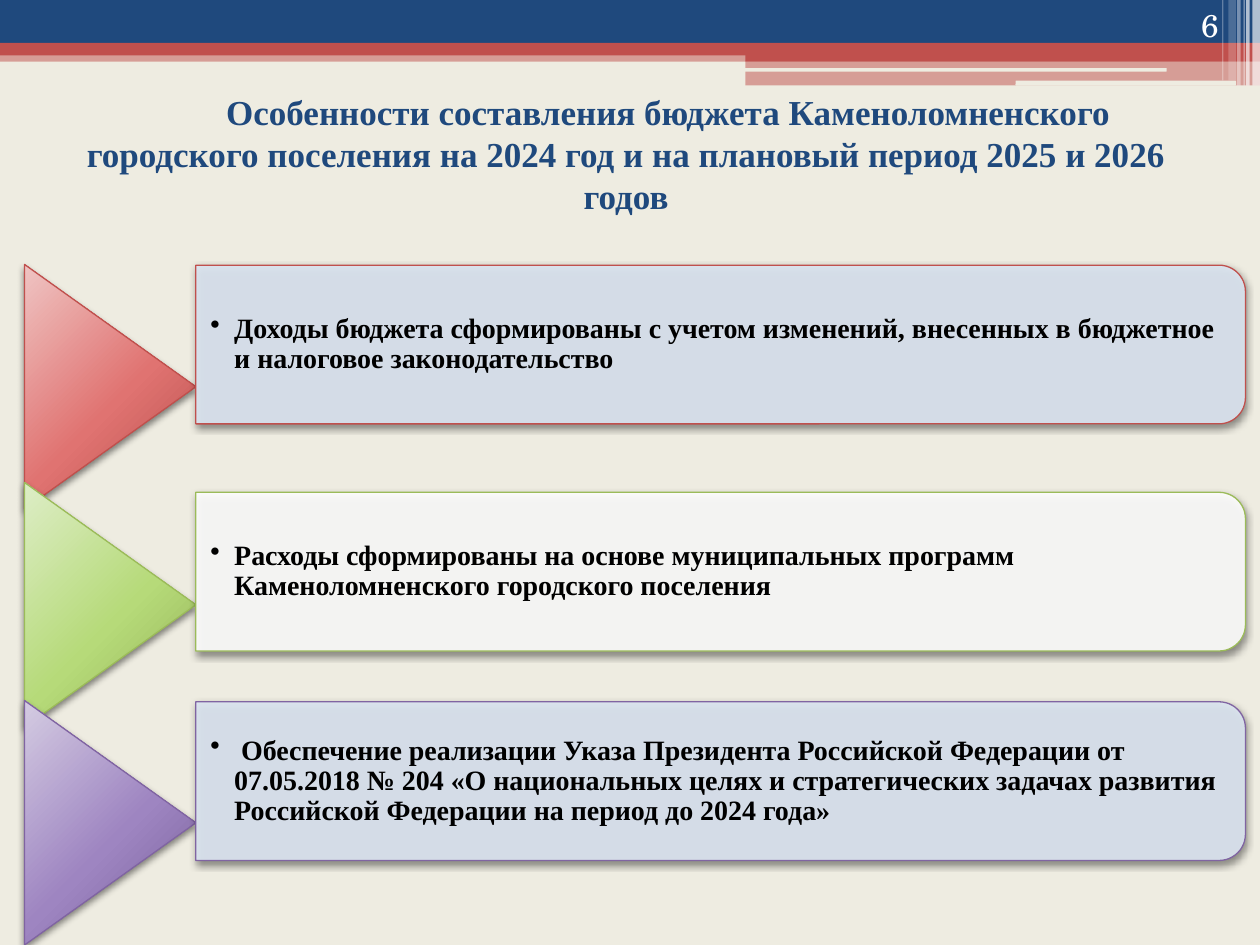
from typing import NamedTuple

from lxml.etree import SubElement
from pptx import Presentation
from pptx.dml.color import RGBColor
from pptx.enum.shapes import MSO_SHAPE
from pptx.enum.text import MSO_ANCHOR, PP_ALIGN
from pptx.oxml import parse_xml
from pptx.oxml.ns import nsdecls, qn
from pptx.util import Pt

HEX = {
    "cream": "EEECE1", "navy": "1F497D", "red": "C0504D", "green": "9BBB59",
    "violet": "8064A2", "white": "FFFFFF", "black": "000000", "ice": "DCE6F2",
}
SERIF = "Times New Roman"
RECT, ROUND = MSO_SHAPE.RECTANGLE, MSO_SHAPE.ROUNDED_RECTANGLE


class Box(NamedTuple):
    left: float
    top: float
    width: float
    height: float


class Band(NamedTuple):
    box: Box
    color: str
    alpha: int = 100
    kind: MSO_SHAPE = RECT


class Item(NamedTuple):
    mid: float
    color: str
    fill: str
    shades: tuple[str, str, str]
    text: str


BANDS = [
    # Header stripes
    Band(Box(0, 28.8, 720, 6.5), "red", 50),
    Band(Box(0, 0, 720, 24.5), "navy"),
    Band(Box(0, 24.5, 720, 7.2), "red"),
    Band(Box(426, 28.1, 294, 7), "red"),
    Band(Box(426, 34.6, 294, 14.2), "red", 50),
    Band(Box(425.5, 38.9, 241.2, 2), "cream", 100, ROUND),
    Band(Box(580.3, 46.1, 126, 2.8), "cream", 100, ROUND),
    # Light bars at the right edge
    *(Band(Box(left, 0, width, height), "white", alpha)
      for left, width, height, alpha in [
          (715.7, 4.3, 49, 65), (712.1, 2, 49, 65), (710.6, 0.7, 49, 60),
          (707, 2, 49, 40), (702, 4.3, 46, 20), (698.4, 0.7, 46, 30)]),
]

ITEMS = [
    Item(196.9, "red", "ice", ("EFC4C3", "E07371", "B34B48"),
         "Доходы бюджета сформированы с учетом изменений, внесенных в "
         "бюджетное и налоговое законодательство"),
    Item(326.7, "green", "white", ("DDEDC6", "B6DA79", "90AE53"),
         "Расходы сформированы на основе муниципальных программ "
         "Каменоломненского городского поселения"),
    Item(446.4, "violet", "ice", ("D4CBE2", "9E85C1", "775D97"),
         " Обеспечение реализации Указа Президента Российской Федерации от "
         "07.05.2018 № 204 «О национальных целях и стратегических задачах "
         "развития Российской Федерации на период до 2024 года»"),
]


def rgb(name: str) -> RGBColor:
    return RGBColor.from_string(HEX[name])


def apply(target, values: dict) -> None:
    for key, value in values.items():
        setattr(target, key, value)


def draw(shapes, kind: MSO_SHAPE, box: Box):
    shape = shapes.add_shape(kind, *map(Pt, box))
    shape.shadow.inherit = False
    shape.line.fill.background()
    return shape


def paint(shape, color: str, alpha: int) -> None:
    shape.fill.solid()
    shape.fill.fore_color.rgb = rgb(color)
    if alpha < 100:
        fill = shape._element.spPr.find(qn("a:solidFill"))
        SubElement(fill[0], qn("a:alpha"), val=str(alpha * 1000))


def blend(shape, shades: tuple[str, str, str]) -> None:
    """Fill with a circular gradient of three shades."""
    shape.fill.background()
    stops = "".join(
        f'<a:gs pos="{pos}"><a:srgbClr val="{shade}"/></a:gs>'
        for pos, shade in zip((0, 55000, 100000), shades))
    grad = parse_xml(
        f'<a:gradFill {nsdecls("a")} rotWithShape="1"><a:gsLst>{stops}</a:gsLst>'
        '<a:path path="circle"><a:fillToRect l="-40000" t="-90000" '
        'r="140000" b="190000"/></a:path></a:gradFill>')
    props = shape._element.spPr
    props.replace(props.find(qn("a:noFill")), grad)


def edge(shape, color: str) -> None:
    """Add the outline and the soft shadow below."""
    shape.line.color.rgb = rgb(color)
    shape.line.width = Pt(0.75)
    shape._element.spPr.find(qn("a:effectLst")).append(parse_xml(
        f'<a:outerShdw {nsdecls("a")} blurRad="{Pt(4)}" dist="{Pt(2)}" '
        'dir="5400000" rotWithShape="0"><a:srgbClr val="000000">'
        '<a:alpha val="45000"/></a:srgbClr></a:outerShdw>'))


def turned(shapes, kind: MSO_SHAPE, x: float, y: float, width: float, height: float):
    """Draw a shape centred on x, y and turned a quarter clockwise."""
    shape = draw(shapes, kind, Box(x - width / 2, y - height / 2, width, height))
    shape.rotation = 90
    return shape


def write(shapes, box: Box, text: str, frame: dict, para: dict, font: dict,
          color: str, indent: tuple[float, float] = (0, 0), dot: bool = False) -> None:
    body = shapes.add_textbox(*map(Pt, box)).text_frame
    apply(body, {"word_wrap": True, **frame})
    line = body.paragraphs[0]
    line.text = text
    props = line._p.get_or_add_pPr()
    props.set("marL", str(Pt(indent[0])))
    props.set("indent", str(Pt(indent[1])))
    if dot:
        SubElement(props, qn("a:buChar"), char="•")
    apply(line, para)
    apply(line.runs[0].font, font)
    line.runs[0].font.color.rgb = rgb(color)


def main() -> None:
    deck = Presentation()
    apply(deck, {"slide_width": Pt(720), "slide_height": Pt(540)})
    slide = deck.slides.add_slide(deck.slide_layouts[6])
    slide.background.fill.solid()
    slide.background.fill.fore_color.rgb = rgb("cream")
    shapes = slide.shapes

    for band in BANDS:
        paint(draw(shapes, band.kind, band.box), band.color, band.alpha)

    # Title
    write(shapes, Box(25.2, 60.5, 660.2, 72.7),
          "Особенности составления бюджета Каменоломненского городского "
          "поселения на 2024 год и на плановый период 2025 и 2026 годов",
          {"vertical_anchor": MSO_ANCHOR.MIDDLE, "margin_bottom": Pt(21.6)},
          {"alignment": PP_ALIGN.CENTER},
          {"name": SERIF, "size": Pt(20), "bold": True}, "navy", (5, 48))

    # Arrowed list
    inset = Pt(0.7)
    frame = {"vertical_anchor": MSO_ANCHOR.MIDDLE, "margin_left": Pt(8.6),
             "margin_top": inset, "margin_right": inset, "margin_bottom": inset}
    for row, item in enumerate(ITEMS):
        arrow = turned(shapes, MSO_SHAPE.ISOSCELES_TRIANGLE,
                       63, 221 + 124.6 * row, 139.7, 97.9)
        blend(arrow, item.shades)
        edge(arrow, item.color)
        card = turned(shapes, MSO_SHAPE.ROUND_2_SAME_RECTANGLE,
                      411.8, item.mid, 90.7, 599.8)
        paint(card, item.fill, 90)
        edge(card, item.color)
        write(shapes, Box(111.6, item.mid - 41, 595.4, 82), item.text, frame,
              {"level": 1, "line_spacing": 0.9, "space_after": Pt(2.4)},
              {"name": SERIF, "size": Pt(16), "bold": True}, "black",
              (13.7, -13.7), True)

    # Slide number
    write(shapes, Box(643.7, 0, 59.8, 28.8), "6",
          {"vertical_anchor": MSO_ANCHOR.BOTTOM}, {"alignment": PP_ALIGN.RIGHT},
          {"name": "TeX Gyre Schola", "size": Pt(18)}, "white")

    deck.save("out.pptx")


if __name__ == "__main__":
    main()
